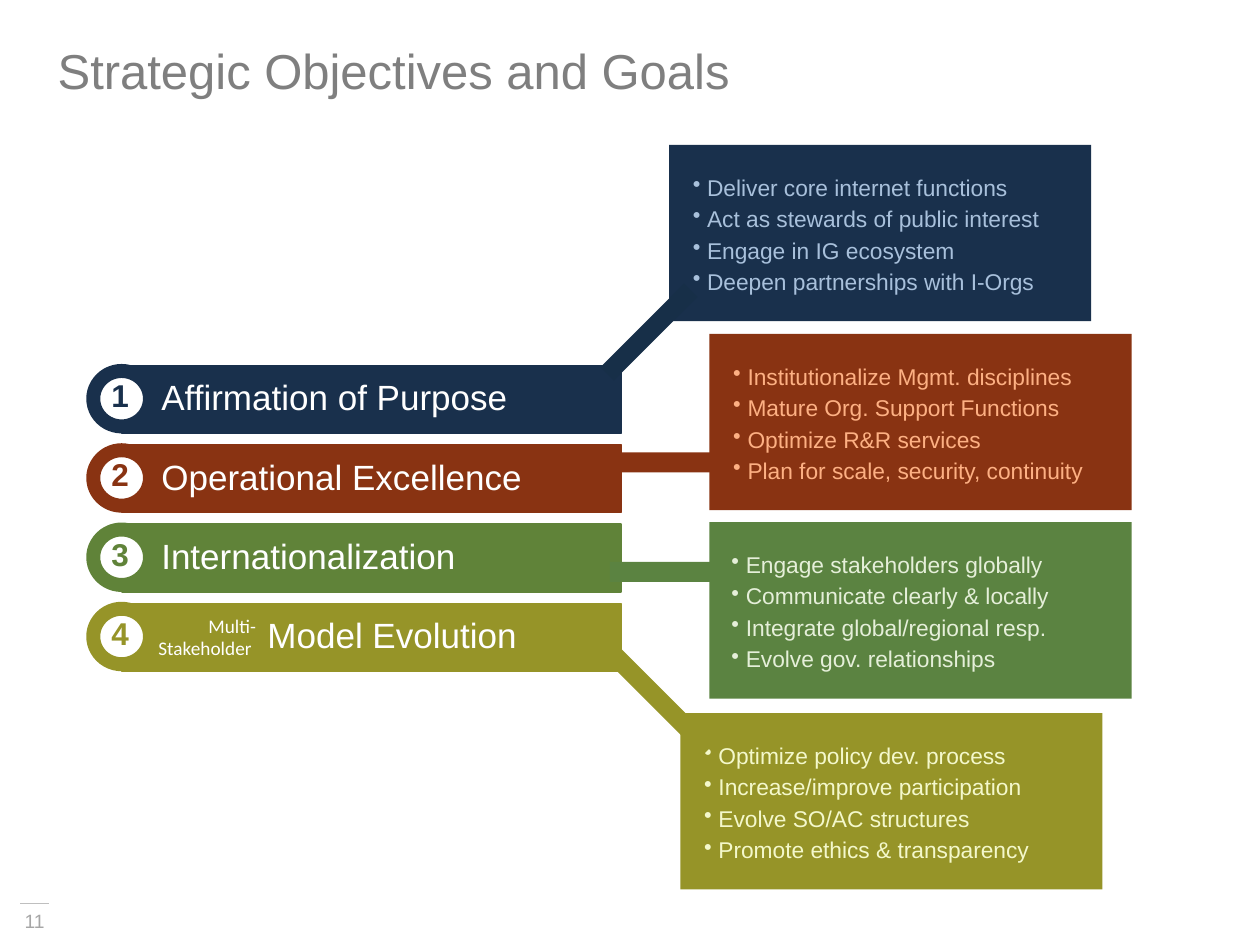
from lxml import etree
from pptx import Presentation
from pptx.dml.color import RGBColor
from pptx.enum.shapes import MSO_CONNECTOR as CONN, MSO_SHAPE as SHAPE
from pptx.enum.text import MSO_ANCHOR as ANCHOR, PP_ALIGN as ALIGN
from pptx.oxml.ns import qn
from pptx.util import Pt

NAVY, RUST, OLIVE, MOSS, GREEN = "19304C", "893312", "969428", "608339", "5B8341"
WHITE = "FFFFFF"
ROW_TOP, ROW_STEP = 208.8, 45.3
PANEL_W, PANEL_H = 241.2, 100.8
BULLET_INDENT = 8.2

ROWS = [
    ("Affirmation of Purpose", NAVY, 21.6),
    ("Operational Excellence", RUST, 21.6),
    ("Internationalization", MOSS, 21.6),
    ("Model Evolution", OLIVE, 82.2),
]

BARS = [
    (348.5, 258.5, 72, 11.5, RUST, 0),
    (348.5, 321.1, 72, 11.5, GREEN, 0),
    (337, 184.3, 67.7, 10.8, "172F48", 315),
    (334.8, 393.8, 82.1, 10.8, OLIVE, 225),
]

PURPOSE = (382.3, 82.8, 6.5, NAVY, "A8C0DB", [
    "Deliver core internet functions",
    "Act as stewards of public interest",
    "Engage in IG ecosystem",
    "Deepen partnerships with I-Orgs",
])
EXCELLENCE = (405.4, 190.8, 6.5, RUST, "FDB083", [
    "Institutionalize Mgmt. disciplines",
    "Mature Org. Support Functions",
    "Optimize R&R services",
    "Plan for scale, security, continuity",
])
GLOBAL = (405.4, 298.4, 5.5, GREEN, "E5EFD9", [
    "Engage stakeholders globally",
    "Communicate clearly & locally",
    "Integrate global/regional resp.",
    "Evolve gov. relationships",
])
EVOLUTION = (388.8, 407.5, 6.5, OLIVE, "F4F8CB", [
    "Optimize policy dev. process",
    "Increase/improve participation",
    "Evolve SO/AC structures",
    "Promote ethics & transparency",
])


def rgb(color):
    return RGBColor.from_string(color)


def set_attrs(obj, fmt):
    for name, value in fmt.items():
        setattr(obj, name, value)


def add_block(s, kind, x, y, w, h, fill, line=None, line_w=0.75, rotation=0):
    sp = s.shapes.add_shape(kind, Pt(x), Pt(y), Pt(w), Pt(h))
    sp.shadow.inherit = False
    sp.rotation = rotation
    sp.fill.solid()
    sp.fill.fore_color.rgb = rgb(fill)
    if line:
        sp.line.color.rgb = rgb(line)
        sp.line.width = Pt(line_w)
    else:
        sp.line.fill.background()


def add_bullet(p):
    pPr = p._p.get_or_add_pPr()
    pPr.set("marL", str(Pt(BULLET_INDENT)))
    pPr.set("indent", str(-Pt(BULLET_INDENT)))
    etree.SubElement(pPr, qn("a:buChar")).set("char", "•")


def add_text(s, x, y, w, h, lines, size, color, font="Arial", bold=False,
             align=ALIGN.LEFT, anchor=ANCHOR.TOP, insets=(7.2, 3.6, 7.2, 3.6),
             spacing=None, bullets=False):
    tf = s.shapes.add_textbox(Pt(x), Pt(y), Pt(w), Pt(h)).text_frame
    set_attrs(tf, {"word_wrap": True, "vertical_anchor": anchor})
    sides = ("margin_left", "margin_top", "margin_right", "margin_bottom")
    set_attrs(tf, {side: Pt(v) for side, v in zip(sides, insets)})
    for i, line in enumerate(lines):
        p = tf.paragraphs[0] if i == 0 else tf.add_paragraph()
        set_attrs(p, {"alignment": align, "line_spacing": spacing})
        if bullets:
            add_bullet(p)
        r = p.add_run()
        r.text = line
        set_attrs(r.font, {"name": font, "size": Pt(size), "bold": bold})
        r.font.color.rgb = rgb(color)


def add_row(s, index, label, color, inset):
    y = ROW_TOP + index * ROW_STEP
    add_block(s, SHAPE.RECTANGLE, 69.8, y, 285.1, 38.9, color, color)
    add_block(s, SHAPE.OVAL, 53.3, y + 3.2, 32.4, 31.7, WHITE, color, 8)
    add_text(s, 70.6, y, 254.9, 39.6, [label], 20, WHITE,
             anchor=ANCHOR.MIDDLE, insets=(inset, 0, 0, 3.6))
    add_text(s, 48.2, y - 1.2, 41, 39.6, [str(index + 1)], 18, color, bold=True,
             align=ALIGN.CENTER, anchor=ANCHOR.MIDDLE, insets=(0, 0, 0, 3.6))


def add_panel(s, x, y, offset, fill, color, goals):
    add_block(s, SHAPE.RECTANGLE, x, y, PANEL_W, PANEL_H, fill)
    add_text(s, x + offset, y + 10.4, PANEL_W - offset, 79.2, goals, 13, color,
             spacing=Pt(18), bullets=True)


def add_page_number(s):
    ln = s.shapes.add_connector(CONN.STRAIGHT, Pt(11.5), Pt(516.2), Pt(28.1), Pt(516.2))
    ln.line.color.rgb = rgb("BFBFBF")
    ln.line.width = Pt(0.75)
    etree.SubElement(ln._element.spPr, qn("a:effectLst"))
    add_text(s, 2.9, 516.2, 33.8, 20.9, ["11"], 11, "A6A6A6", align=ALIGN.CENTER)


def main():
    prs = Presentation()
    set_attrs(prs, {"slide_width": Pt(720), "slide_height": Pt(540)})
    s = prs.slides.add_slide(prs.slide_layouts[6])
    add_page_number(s)
    add_text(s, 25.9, 25.2, 470.9, 34.6, ["Strategic Objectives and Goals"], 28,
             "7F7F7F", anchor=ANCHOR.BOTTOM, spacing=0.8)
    add_panel(s, *PURPOSE)
    for i, row in enumerate(ROWS):
        add_row(s, i, *row)
    add_text(s, 70.6, 344.9, 82.8, 32.4, ["Multi-", "Stakeholder "], 11, WHITE,
             font="Calibri", align=ALIGN.RIGHT, insets=(7.2, 7.2, 7.2, 0),
             spacing=Pt(12.4))
    add_panel(s, *EVOLUTION)
    for x, y, w, h, color, angle in BARS:
        add_block(s, SHAPE.RECTANGLE, x, y, w, h, color, rotation=angle)
    add_panel(s, *EXCELLENCE)
    add_panel(s, *GLOBAL)
    prs.save("out.pptx")


if __name__ == "__main__":
    main()
